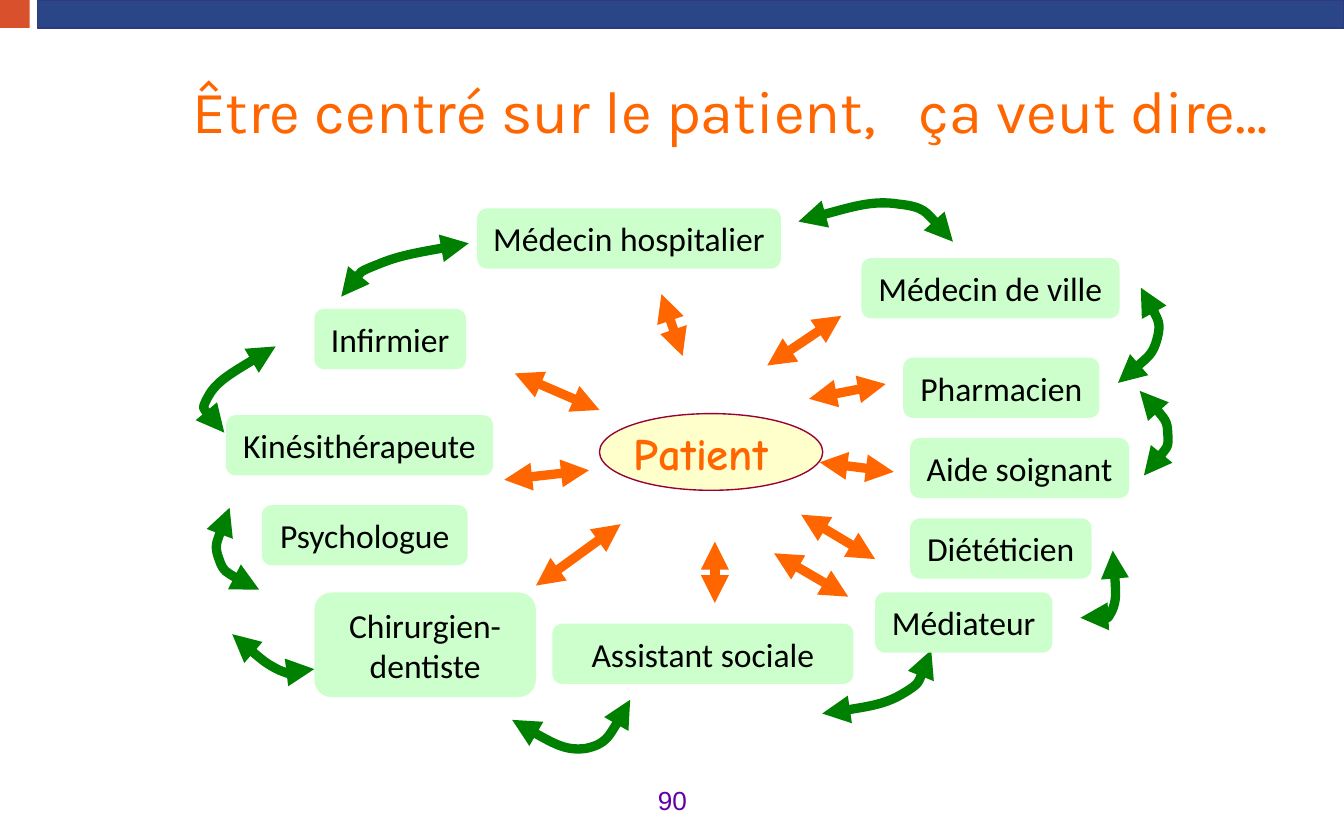
from lxml.etree import SubElement
from pptx import Presentation
from pptx.dml.color import RGBColor
from pptx.enum.shapes import MSO_CONNECTOR, MSO_SHAPE
from pptx.enum.text import MSO_ANCHOR as Anchor, PP_ALIGN as Align
from pptx.oxml.ns import qn
from pptx.util import Cm, Pt

COLORS = {
    "red": "D8512C", "blue": "2B4687", "blue edge": "2E3883",
    "orange": "FF6600", "green": "008000", "mint": "CCFFCC",
    "cream": "FFFFCC", "wine": "990033", "purple": "6200A4", "black": "000000",
}
TITLE = ("Être centré sur le patient,", " ", "ça veut dire…")
TITLE_GAP = 15
ROLE_HEIGHT = 1.14
TALL_ROLE_HEIGHT = 1.98
ROLES = [
    ("Médecin hospitalier", 9.02, 3.94, 5.74, ROLE_HEIGHT),
    ("Médecin de ville", 16.28, 4.88, 4.88, ROLE_HEIGHT),
    ("Pharmacien", 17.07, 6.76, 3.71, ROLE_HEIGHT),
    ("Aide soignant", 17.2, 8.28, 4.14, ROLE_HEIGHT),
    ("Diététicien", 17.2, 9.8, 3.43, ROLE_HEIGHT),
    ("Médiateur", 16.54, 11.2, 3.35, ROLE_HEIGHT),
    ("Assistant sociale", 10.44, 11.79, 5.69, ROLE_HEIGHT),
    ("Chirurgien-dentiste", 5.94, 11.2, 4.19, TALL_ROLE_HEIGHT),
    ("Psychologue", 4.95, 9.55, 3.89, ROLE_HEIGHT),
    ("Kinésithérapeute", 4.27, 7.85, 5.05, ROLE_HEIGHT),
    ("Infirmier", 5.94, 5.84, 2.87, ROLE_HEIGHT),
]
WRAPPED_ROLES = {"Assistant sociale", "Chirurgien-dentiste"}
PATIENT_ARROWS = [
    (12.5, 5.56, 12.9, 6.73), (15.9, 5.97, 14.5, 6.91),
    (16.74, 7.26, 15.29, 7.54), (16.89, 8.92, 15.49, 8.74),
    (16.54, 10.57, 15.14, 9.73), (16.03, 11.28, 14.63, 10.46),
    (13.51, 10.24, 13.51, 11.4), (11.73, 9.91, 10.13, 11.07),
    (11.13, 8.89, 9.53, 9.07), (11.33, 7.75, 9.73, 7.06),
]
ROLE_CURVES = [
    [(15.09, 4.19), (15.8, 3.99), (16.51, 3.78), (16.99, 3.86), (17.48, 3.91), (17.73, 4.24), (18.01, 4.57)],
    [(21.13, 7.24), (21.46, 6.96), (21.79, 6.71), (21.87, 6.4), (21.95, 6.1), (21.77, 5.77), (21.56, 5.44)],
    [(21.62, 8.99), (21.84, 8.74), (22.1, 8.48), (22.07, 8.2), (22.07, 7.95), (21.82, 7.67), (21.54, 7.39)],
    [(20.42, 11.68), (20.68, 11.73), (20.9, 11.76), (21.01, 11.56), (21.11, 11.35), (21.08, 10.9), (21.03, 10.41)],
    [(15.54, 13.49), (16.15, 13.41), (16.74, 13.31), (17.07, 13.11), (17.42, 12.9), (17.5, 12.6), (17.6, 12.29)],
    [(11.91, 13.23), (11.68, 13.67), (11.46, 14.07), (11.07, 14.15), (10.69, 14.2), (10.19, 13.92), (9.68, 13.61)],
    [(4.39, 11.99), (4.7, 12.27), (5.03, 12.55), (5.28, 12.67), (5.56, 12.78), (5.74, 12.7), (5.94, 12.65)],
    [(4.9, 11.15), (4.55, 11), (4.22, 10.82), (4.14, 10.57), (4.04, 10.31), (4.19, 9.96), (4.34, 9.6)],
    [(4.24, 8.18), (4.01, 7.98), (3.78, 7.77), (3.94, 7.49), (4.09, 7.21), (4.65, 6.88), (5.21, 6.55)],
    [(8.86, 4.6), (8.2, 4.72), (7.54, 4.83), (7.14, 5), (6.73, 5.16), (6.6, 5.38), (6.45, 5.61)],
]


def color(name):
    return RGBColor.from_string(COLORS[name])


def add_box(slide, preset, bounds, fill, edge=None):
    shape = slide.shapes.add_shape(preset, *map(Cm, bounds))
    shape.shadow.inherit = False
    shape.fill.solid()
    shape.fill.fore_color.rgb = color(fill)
    if edge:
        shape.line.color.rgb = color(edge)
        shape.line.width = Pt(0.75)
    else:
        shape.line.fill.background()
    return shape


def write(shape, runs, font_name, size, ink, wrap=True, align=Align.CENTER, bold=False):
    frame = shape.text_frame
    frame.word_wrap = wrap
    frame.vertical_anchor = Anchor.MIDDLE
    paragraph = frame.paragraphs[0]
    paragraph.alignment = align
    for text in runs:
        paragraph.add_run().text = text
    font = paragraph.font
    font.name, font.size, font.bold = font_name, Pt(size), bold
    font.color.rgb = color(ink)
    return paragraph


def style_arrow(arrow, ink):
    arrow.line.color.rgb = color(ink)
    arrow.line.width = Pt(5)
    for end in ("a:headEnd", "a:tailEnd"):
        SubElement(arrow.line._get_or_add_ln(), qn(end), type="triangle")


def add_curve(slide, points):
    start, *rest = [(Cm(x), Cm(y)) for x, y in points]
    builder = slide.shapes.build_freeform(*start)
    builder.add_line_segments(rest, close=False)
    curve = builder.convert_to_shape()
    curve.shadow.inherit = False
    curve.fill.background()
    outline = next(curve._element.iter(qn("a:path")))
    segments = outline.findall(qn("a:lnTo"))
    for first in range(0, len(segments), 3):
        bezier = SubElement(outline, qn("a:cubicBezTo"))
        for segment in segments[first:first + 3]:
            bezier.append(segment[0])
            outline.remove(segment)
    style_arrow(curve, "green")


def main():
    presentation = Presentation()
    presentation.slide_width, presentation.slide_height = Cm(25.4), Cm(15.88)
    slide = presentation.slides.add_slide(presentation.slide_layouts[6])
    shapes = slide.shapes

    add_box(slide, MSO_SHAPE.RECTANGLE, (0, 0, 0.56, 0.53), "red")
    add_box(slide, MSO_SHAPE.RECTANGLE, (0.71, 0, 24.69, 0.53), "blue", "blue edge")
    title = shapes.add_textbox(Cm(2.72), Cm(0.81), Cm(22.17), Cm(2.51))
    heading = write(title, TITLE, "Karla", 32, "orange")
    heading.runs[1].font._element.set("spc", str(TITLE_GAP * 100))
    page_number = shapes.add_textbox(Cm(9.75), Cm(14.71), Cm(5.92), Cm(0.84))
    write(page_number, ["90"], "Arial", 14, "purple")

    for points in ROLE_CURVES:
        add_curve(slide, points)
    for ends in PATIENT_ARROWS:
        arrow = shapes.add_connector(MSO_CONNECTOR.STRAIGHT, *map(Cm, ends))
        style_arrow(arrow, "orange")
        SubElement(arrow._element.spPr, qn("a:effectLst"))
    for role, *bounds in ROLES:
        box = add_box(slide, MSO_SHAPE.ROUNDED_RECTANGLE, bounds, "mint")
        write(box, [role], "Calibri", 18, "black", wrap=role in WRAPPED_ROLES)

    add_box(slide, MSO_SHAPE.OVAL, (11.33, 7.82, 4.22, 1.45), "cream", "wine")
    patient = shapes.add_textbox(Cm(11.73), Cm(7.9), Cm(3.4), Cm(1.3))
    write(patient, ["Patient"], "Comic Neue", 24, "orange", wrap=False, align=Align.LEFT, bold=True)

    presentation.save("out.pptx")


if __name__ == "__main__":
    main()
